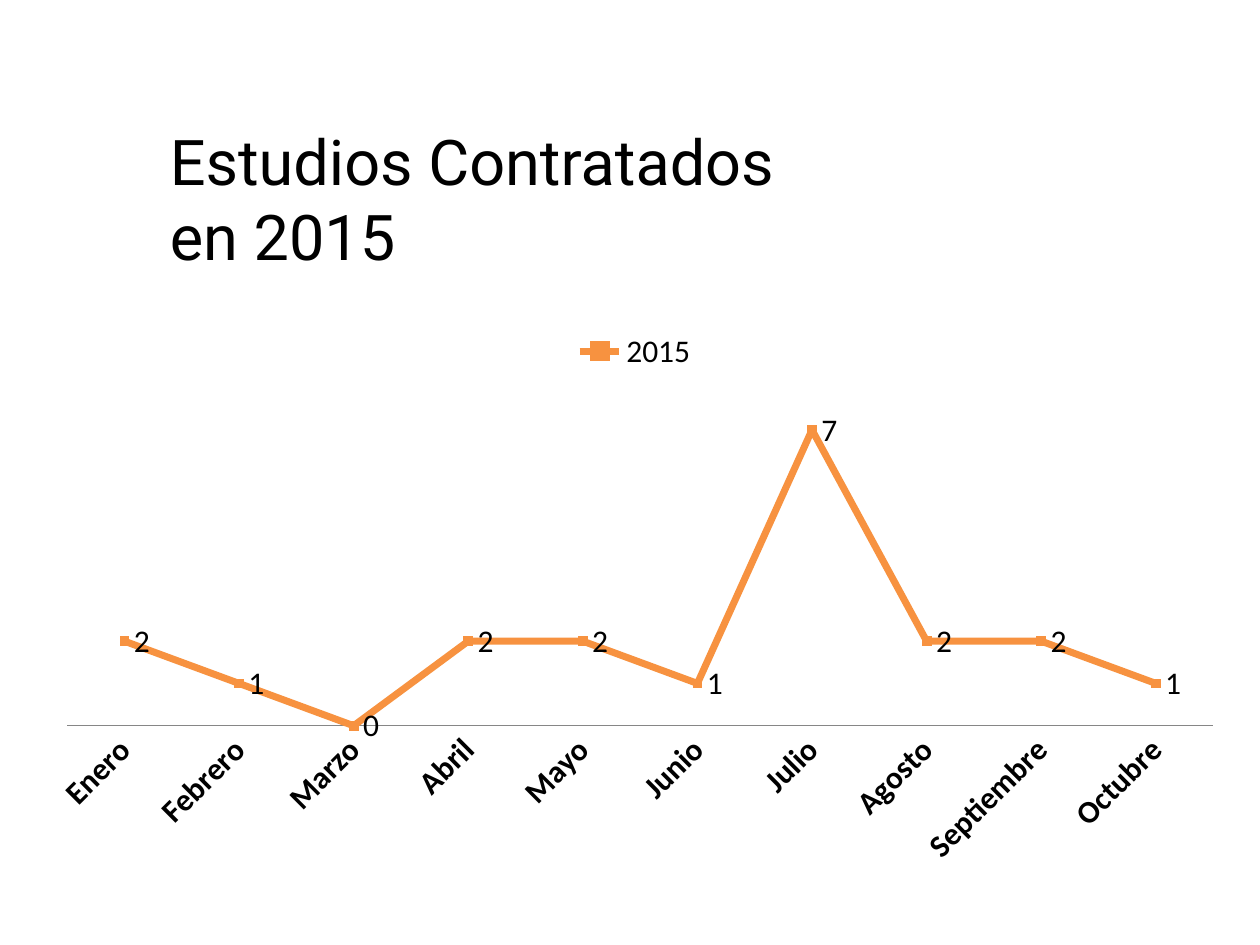
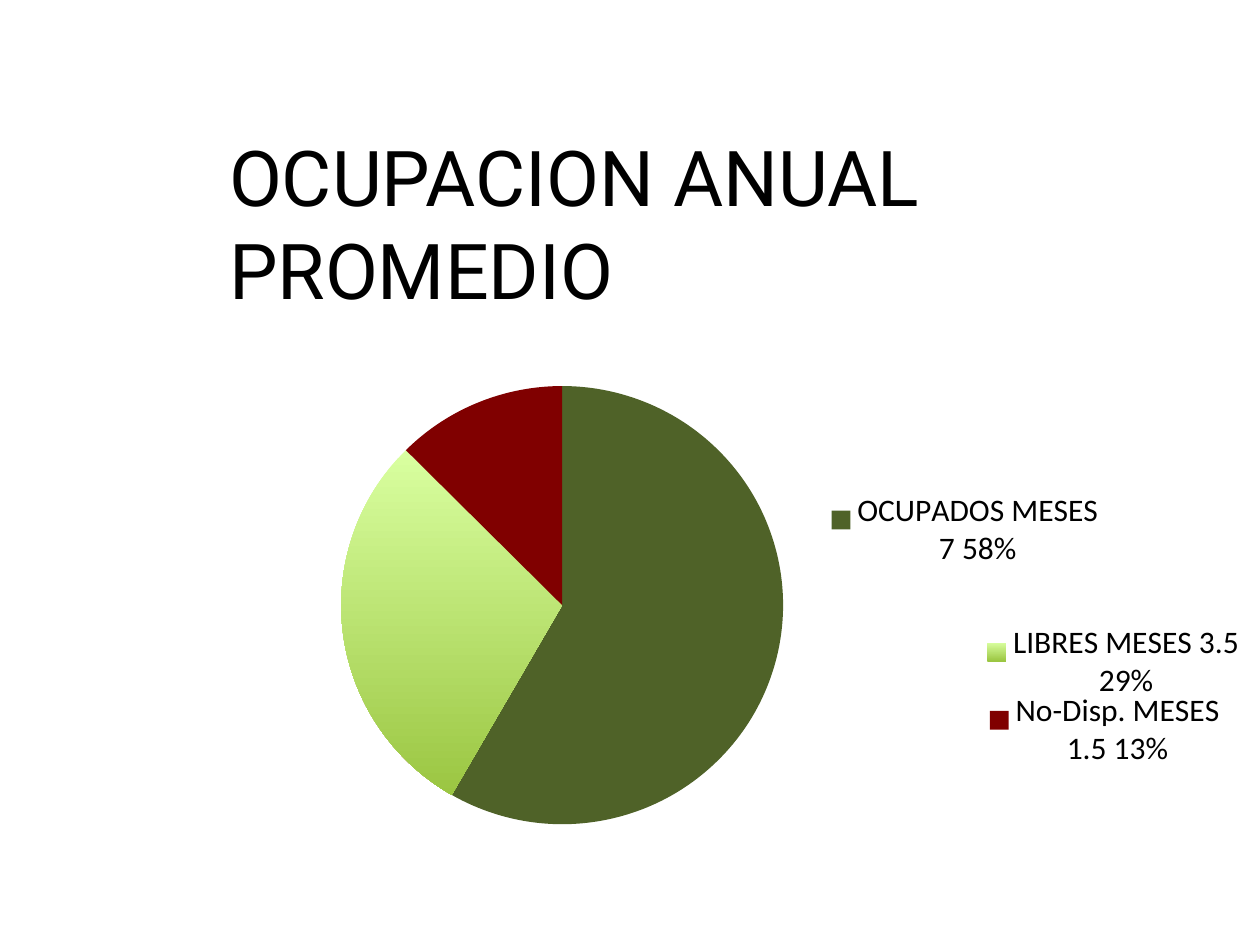
"""Build two slides: studies hired in 2015 and the average yearly occupation."""
from dataclasses import dataclass

from lxml import etree
from pptx import Presentation
from pptx.chart.chart import Chart
from pptx.chart.data import CategoryChartData
from pptx.dml.color import RGBColor
from pptx.dml.fill import FillFormat
from pptx.enum.chart import (XL_CHART_TYPE, XL_LABEL_POSITION, XL_LEGEND_POSITION,
                             XL_MARKER_STYLE, XL_TICK_MARK)
from pptx.enum.text import MSO_AUTO_SIZE
from pptx.oxml import parse_xml
from pptx.oxml.ns import nsdecls, qn
from pptx.slide import Slide
from pptx.util import Inches, Pt

LINE_CHART, PIE_CHART = XL_CHART_TYPE.LINE_MARKERS, XL_CHART_TYPE.PIE
LABEL_RIGHT, LABEL_OUTSIDE = XL_LABEL_POSITION.RIGHT, XL_LABEL_POSITION.OUTSIDE_END
LEGEND_TOP = XL_LEGEND_POSITION.TOP
SQUARE = XL_MARKER_STYLE.SQUARE
NO_TICK = XL_TICK_MARK.NONE
GROW = MSO_AUTO_SIZE.SHAPE_TO_FIT_TEXT

WIDTH, HEIGHT = Inches(10), Inches(7.5)
TITLE_FONT, CHART_FONT, CHART_SIZE = "Roboto", "Calibri", 18
COLORS = {"text": "000000", "line": "F79240", "axis": "868686", "busy": "4F6228",
          "free_top": "D9FFA0", "free_bottom": "9BC642", "unavailable": "800000"}


@dataclass(frozen=True)
class Box:
    """A rectangle in shares of the slide's size."""
    left: float
    top: float
    width: float
    height: float

    def place(self) -> tuple[int, int, int, int]:
        """Return the rectangle in slide units."""
        return (int(self.left * WIDTH), int(self.top * HEIGHT),
                int(self.width * WIDTH), int(self.height * HEIGHT))


@dataclass(frozen=True)
class Slice:
    """A pie slice with its colours and the shift of its label."""
    name: str
    months: float
    colors: tuple[str, ...]
    shift_x: float
    shift_y: float


MONTHLY_STUDIES = {"Enero": 2, "Febrero": 1, "Marzo": 0, "Abril": 2, "Mayo": 2,
                   "Junio": 1, "Julio": 7, "Agosto": 2, "Septiembre": 2, "Octubre": 1}
SLICES = (
    Slice("OCUPADOS", 7, ("busy",), 0.04, -0.31),
    Slice("LIBRES", 3.5, ("free_top", "free_bottom"), 0.74, -0.02),
    Slice("No-Disp.", 1.5, ("unavailable",), 0.61, 0.67),
)
PIE_AREA = {"x": 0.03, "y": 0.11, "w": 0.83, "h": 0.79}


def rgb(name: str) -> RGBColor:
    """Look up a palette colour."""
    return RGBColor.from_string(COLORS[name])


def paint(fill: FillFormat, names: tuple[str, ...]) -> None:
    """Fill with one colour, or with a gradient from top to bottom."""
    if len(names) == 1:
        fill.solid()
        fill.fore_color.rgb = rgb(names[0])
        return
    fill.gradient()
    fill.gradient_angle = 270
    for stop, name in zip(fill.gradient_stops, names):
        stop.color.rgb = rgb(name)


def add_text(slide: Slide, text: str, box: Box, *, size: float,
             font: str = TITLE_FONT, color: str = "text") -> None:
    """Add a wrapped text box that grows with its text."""
    frame = slide.shapes.add_textbox(*box.place()).text_frame
    frame.word_wrap = True
    frame.auto_size = GROW
    paragraph = frame.paragraphs[0]
    paragraph.text = text
    paragraph.font.name = font
    paragraph.font.size = Pt(size)
    paragraph.font.color.rgb = rgb(color)


def add_chart(slide: Slide, kind: XL_CHART_TYPE, box: Box, series_name: str,
              values: dict[str, float]) -> Chart:
    """Add a chart of one series in the shared chart font."""
    data = CategoryChartData()
    data.categories = list(values)
    data.add_series(series_name, list(values.values()))
    chart = slide.shapes.add_chart(kind, *box.place(), data).chart
    chart.has_title = False
    chart.has_legend = False
    chart.font.name = CHART_FONT
    chart.font.size = Pt(CHART_SIZE)
    chart.font.color.rgb = rgb("text")
    return chart


def layout_xml(**shares: float) -> str:
    """Return a manual chart layout."""
    values = "".join(f'<c:{key} val="{value}"/>' for key, value in shares.items())
    target = ""
    if "w" in shares:
        target = ('<c:layoutTarget val="inner"/><c:xMode val="edge"/>'
                  '<c:yMode val="edge"/>')
    return (f'<c:layout {nsdecls("c")}><c:manualLayout>{target}{values}'
            '</c:manualLayout></c:layout>')


def label_xml(index: int, part: Slice) -> etree._Element:
    """Return a shifted slice label with its colour key."""
    shown = "".join(f'<c:show{key} val="1"/>' for key in
                    ("LegendKey", "Val", "CatName", "SerName", "Percent"))
    return parse_xml(
        f'<c:dLbl {nsdecls("c")}><c:idx val="{index}"/>'
        f'{layout_xml(x=part.shift_x, y=part.shift_y)}<c:dLblPos val="outEnd"/>'
        f'{shown}<c:showBubbleSize val="0"/><c:separator> </c:separator></c:dLbl>')


def hide_leader_lines(labels: etree._Element) -> None:
    """Switch off the lines between slices and their labels."""
    for leader_lines in labels.findall(qn("c:showLeaderLines")):
        labels.remove(leader_lines)
    labels.append(parse_xml(f'<c:showLeaderLines {nsdecls("c")} val="0"/>'))


def build_studies(slide: Slide) -> None:
    """Draw the line chart of studies hired each month."""
    chart = add_chart(slide, LINE_CHART, Box(0.026, 0.335, 0.956, 0.592),
                      "2015", MONTHLY_STUDIES)
    chart.has_legend = True
    chart.legend.position = LEGEND_TOP
    chart.legend.include_in_layout = False

    value_axis = chart.value_axis
    value_axis.visible = False
    value_axis.has_major_gridlines = False
    value_axis.minimum_scale, value_axis.maximum_scale = 0, 8
    month_axis = chart.category_axis
    month_axis.major_tick_mark = NO_TICK
    month_axis.format.line.color.rgb = rgb("axis")
    month_axis.tick_labels.font.bold = True
    month_axis.tick_labels.font.size = Pt(CHART_SIZE)
    body = month_axis._element.find(qn("c:txPr")).find(qn("a:bodyPr"))
    body.set("rot", "-2700000")

    chart.plots[0].vary_by_categories = False
    series = chart.plots[0].series[0]
    series.smooth = False
    series.format.line.color.rgb = rgb("line")
    series.format.line.width = Pt(4)
    series.marker.style = SQUARE
    series.marker.size = 5
    paint(series.marker.format.fill, ("line",))
    series.marker.format.line.color.rgb = rgb("line")
    series.data_labels.show_value = True
    series.data_labels.position = LABEL_RIGHT

    add_text(slide, "Estudios Contratados en 2015", Box(0.125, 0.123, 0.516, 0.095), size=36)


def build_occupation(slide: Slide) -> None:
    """Draw the pie chart of busy, free and unavailable months."""
    add_text(slide, "OCUPACION ANUAL PROMEDIO", Box(0.172, 0.131, 0.67, 0.112), size=44)
    chart = add_chart(slide, PIE_CHART, Box(0.015, 0.339, 0.969, 0.592), "MESES",
                      {part.name: part.months for part in SLICES})
    plot_area = chart._chartSpace.chart.plotArea
    for old_layout in plot_area.findall(qn("c:layout")):
        plot_area.remove(old_layout)
    plot_area.insert(0, parse_xml(layout_xml(**PIE_AREA)))

    chart.plots[0].vary_by_categories = True
    series = chart.plots[0].series[0]
    labels = series.data_labels
    labels.show_value = labels.show_percentage = True
    labels.show_category_name = labels.show_series_name = True
    labels.show_legend_key = True
    labels.position = LABEL_OUTSIDE
    hide_leader_lines(labels._element)
    for index, part in enumerate(SLICES):
        paint(series.points[index].format.fill, part.colors)
        labels._element.insert(index, label_xml(index, part))


def main() -> None:
    """Build and save the presentation."""
    presentation = Presentation()
    presentation.slide_width, presentation.slide_height = WIDTH, HEIGHT
    blank = presentation.slide_layouts[6]
    for build in (build_studies, build_occupation):
        build(presentation.slides.add_slide(blank))
    presentation.save("out.pptx")


if __name__ == "__main__":
    main()
